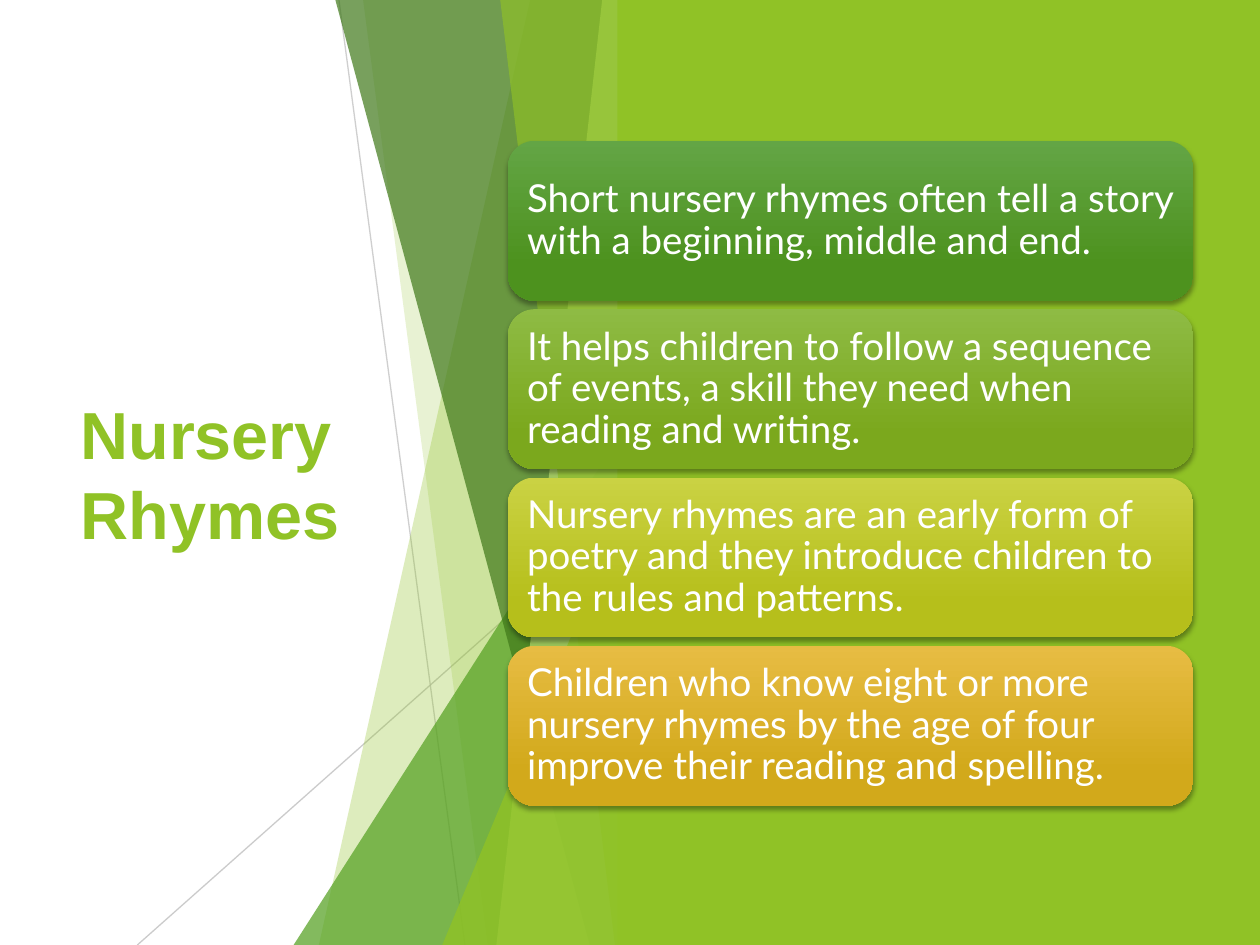
"""Build the Nursery Rhymes slide: a title, faceted bands and four text cards."""
from lxml import etree
from pptx import Presentation
from pptx.dml.color import RGBColor
from pptx.enum.shapes import MSO_CONNECTOR, MSO_SHAPE
from pptx.enum.text import MSO_ANCHOR, PP_ALIGN
from pptx.oxml.ns import qn
from pptx.util import Pt

RECT = MSO_SHAPE.RECTANGLE
ROUNDED = MSO_SHAPE.ROUNDED_RECTANGLE
TRIANGLE = MSO_SHAPE.ISOSCELES_TRIANGLE
STRAIGHT = MSO_CONNECTOR.STRAIGHT
MIDDLE = MSO_ANCHOR.MIDDLE
LEFT = PP_ALIGN.LEFT

W, H = 720, 540
EDGE = 360
GREEN, WHITE = "90C226", "FFFFFF"


def rgb(color):
    return RGBColor.from_string(color)


def paint(sp, color, opacity=100):
    sp.shadow.inherit = False
    sp.line.fill.background()
    sp.fill.solid()
    sp.fill.fore_color.rgb = rgb(color)
    if opacity < 100:
        clr = sp.fill._xPr.find(".//" + qn("a:srgbClr"))
        etree.SubElement(clr, qn("a:alpha"), val=str(opacity * 1000))


prs = Presentation()
prs.slide_width, prs.slide_height = Pt(W), Pt(H)
s = prs.slides.add_slide(prs.slide_layouts[6])

paint(s.shapes.add_shape(RECT, 0, 0, Pt(W), Pt(H)), WHITE)

title = s.shapes.add_textbox(Pt(38.9), Pt(108.7), Pt(209.5), Pt(322.6))
tf = title.text_frame
tf.word_wrap = True
tf.vertical_anchor = MIDDLE
tf.text = "Nursery Rhymes"
font = tf.paragraphs[0].runs[0].font
font.name, font.size, font.bold = "Arial", Pt(38), True
font.color.rgb = rgb(GREEN)

for x1, y1, x2, y2, opacity in [(193.7, 0, 265.7, H, 75), (EDGE, 290.2, 78.5, H, 80)]:
    line = s.shapes.add_connector(STRAIGHT, Pt(x1), Pt(y1), Pt(x2), Pt(y2))
    line.line.width = Pt(0.75)
    line.line.color.rgb = rgb("BFBFBF")
    clr = line.line.fill._xPr.find(".//" + qn("a:srgbClr"))
    etree.SubElement(clr, qn("a:alpha"), val=str(opacity * 1000))
    etree.SubElement(line._element.spPr, qn("a:effectLst"))

facets = [
    ("band", 303.1, 182.2, GREEN, 30),
    ("band", 207.4, 278.6, GREEN, 20),
    ("triangle", 167.8, 239.8, "54A021", 72),
    ("band", 191.5, 337, "3F7819", 70),
    ("band", 344.2, 283.7, "C0E474", 70),
    ("band", 285.8, 351.4, GREEN, 65),
    ("triangle", 252.7, 283, GREEN, 80),
]
for kind, a, b, color, opacity in facets:
    if kind == "band":
        fb = s.shapes.build_freeform(Pt(a), Pt(-0.6))
        corners = [(EDGE, -0.6), (EDGE, H), (b, H)]
        fb.add_line_segments([(Pt(x), Pt(y)) for x, y in corners], close=True)
        sp = fb.convert_to_shape()
    else:
        sp = s.shapes.add_shape(TRIANGLE, Pt(a), Pt(b), Pt(EDGE - a), Pt(H - b))
        sp.adjustments[0] = 1
    paint(sp, color, opacity)

paint(s.shapes.add_shape(RECT, Pt(352.8), 0, Pt(W - 352.8), Pt(H)), GREEN)

cards = [
    ("Short nursery rhymes often tell a story with a beginning, middle and end.",
     "63A545", "4D921E"),
    ("It helps children to follow a sequence of events, a skill they need when "
     "reading and writing.", "8EBB44", "7BA81D"),
    ("Nursery rhymes are an early form of poetry and they introduce children to "
     "the rules and patterns.", "CAD243", "B6BF1B"),
    ("Children who know eight or more nursery rhymes by the age of four improve "
     "their reading and spelling.", "E7BC43", "D2A91B"),
]
for i, (text, top, bottom) in enumerate(cards):
    sp = s.shapes.add_shape(ROUNDED, Pt(290.2), Pt(80.5 + 96.2 * i), Pt(391.7), Pt(91.4))
    sp.line.fill.background()
    sp.fill.gradient()
    sp.fill.gradient_angle = 270
    for stop, color, position in zip(sp.fill.gradient_stops, (top, bottom), (0, 0.78)):
        stop.color.rgb = rgb(color)
        stop.position = position

    sp.shadow.inherit = False
    effects = sp._element.spPr.find(qn("a:effectLst"))
    shadow = etree.SubElement(effects, qn("a:outerShdw"), blurRad=str(Pt(3)),
                              dist=str(Pt(2)), dir="5400000", rotWithShape="0")
    clr = etree.SubElement(shadow, qn("a:srgbClr"), val="000000")
    etree.SubElement(clr, qn("a:alpha"), val="35000")

    tf = sp.text_frame
    tf.word_wrap = True
    tf.vertical_anchor = MIDDLE
    tf.margin_left = tf.margin_right = tf.margin_top = tf.margin_bottom = Pt(6.6)
    tf.text = text
    p = tf.paragraphs[0]
    p.alignment = LEFT
    p.line_spacing = 0.9
    font = p.runs[0].font
    font.name, font.size = "Lato", Pt(22)
    font.color.rgb = rgb(WHITE)

prs.save("out.pptx")
